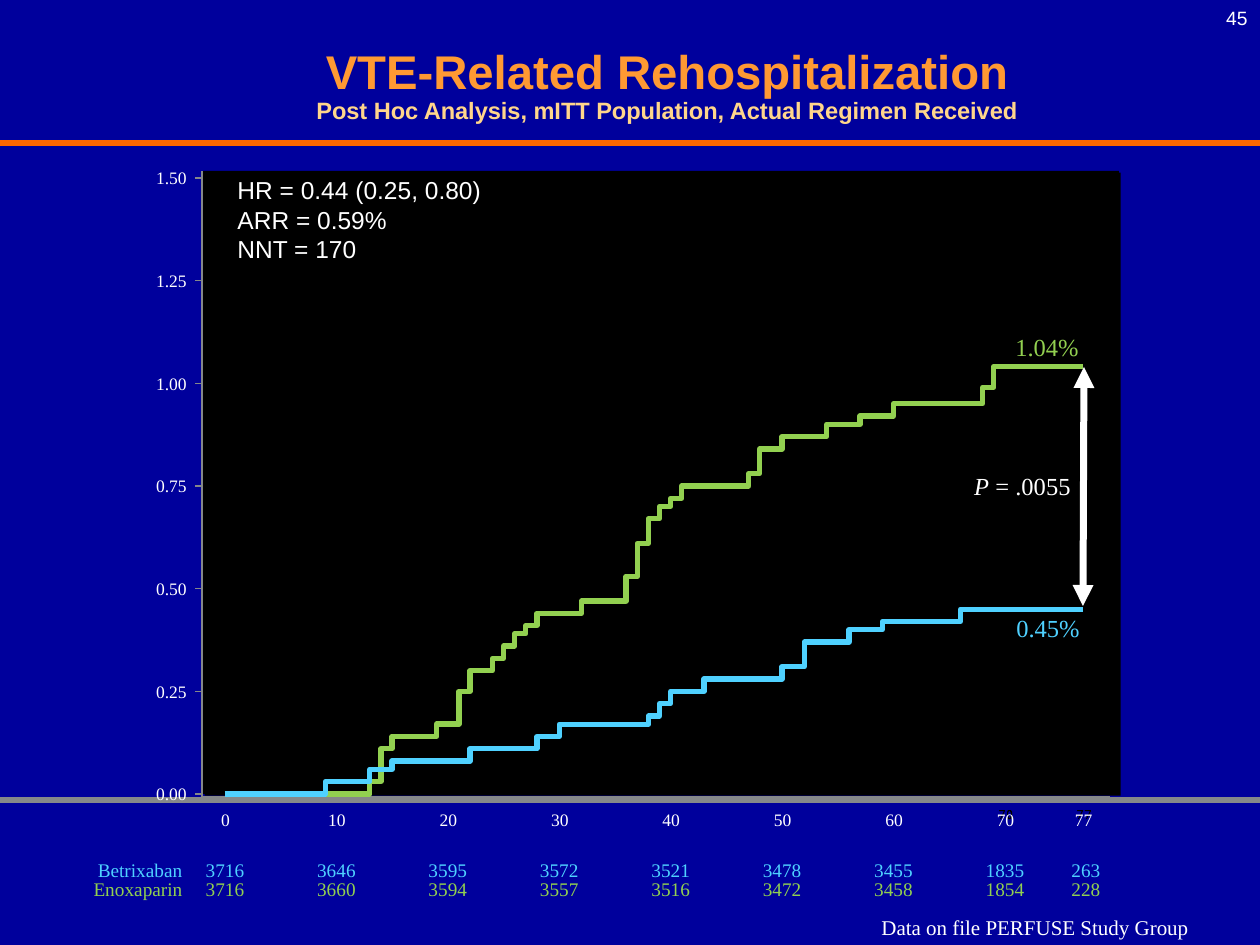
from lxml import etree
from pptx import Presentation
from pptx.dml.color import RGBColor
from pptx.enum.shapes import MSO_CONNECTOR, MSO_SHAPE
from pptx.enum.text import MSO_ANCHOR, PP_ALIGN
from pptx.oxml.ns import qn
from pptx.util import Emu, Pt

LINE = MSO_CONNECTOR.STRAIGHT
RECT = MSO_SHAPE.RECTANGLE
LEFT, MID, RIGHT = PP_ALIGN.LEFT, PP_ALIGN.CENTER, PP_ALIGN.RIGHT
TOP, CENTER = MSO_ANCHOR.TOP, MSO_ANCHOR.MIDDLE

NAVY = RGBColor(0x00, 0x00, 0x9C)
BLACK = RGBColor(0x00, 0x00, 0x00)
WHITE = RGBColor(0xFF, 0xFF, 0xFF)
ORANGE = RGBColor(0xFF, 0x66, 0x00)
AMBER = RGBColor(0xFF, 0x99, 0x33)
CREAM = RGBColor(0xFF, 0xD6, 0x8B)
GRAY = RGBColor(0x85, 0x88, 0x8A)
GREEN = RGBColor(0x92, 0xD0, 0x50)
BLUE = RGBColor(0x4F, 0xD1, 0xFF)
SANS, SERIF = "Arial", "Times New Roman"

TITLE = [
    [("VTE-Related Rehospitalization", {})],
    [("Post Hoc Analysis, mITT Population, Actual Regimen Received",
      {"size": 13.5, "color": CREAM})],
]
STATS = ["HR = 0.44 (0.25, 0.80)", "ARR = 0.59%", "NNT = 170"]
PVALUE = [[("P", {"italic": True}), (" = .0055", {})]]
SOURCE = ["Data on file PERFUSE Study Group"]
DAYS = [0, 10, 20, 30, 40, 50, 60, 70, 77]
RATES = [0, 0.25, 0.5, 0.75, 1, 1.25, 1.5]
ARMS = [
    {"name": "Enoxaparin", "color": GREEN, "top": 871,
     "risk": [3716, 3660, 3594, 3557, 3516, 3472, 3458, 1854, 228],
     "end": "1.04%", "at": (1003, 326),
     "steps": [(13, 0.03), (14, 0.11), (15, 0.14), (19, 0.17), (21, 0.25),
               (22, 0.3), (24, 0.33), (25, 0.36), (26, 0.39), (27, 0.41),
               (28, 0.44), (32, 0.47), (36, 0.53), (37, 0.61), (38, 0.67),
               (39, 0.7), (40, 0.72), (41, 0.75), (47, 0.78), (48, 0.84),
               (50, 0.87), (54, 0.9), (57, 0.92), (60, 0.95), (68, 0.99),
               (69, 1.04)]},
    {"name": "Betrixaban", "color": BLUE, "top": 852,
     "risk": [3716, 3646, 3595, 3572, 3521, 3478, 3455, 1835, 263],
     "end": "0.45%", "at": (1004, 607),
     "steps": [(9, 0.03), (13, 0.06), (15, 0.08), (22, 0.11), (28, 0.14),
               (30, 0.17), (38, 0.19), (39, 0.22), (40, 0.25), (43, 0.28),
               (50, 0.31), (52, 0.37), (56, 0.4), (59, 0.42), (66, 0.45)]},
]
SEVEN = [(6, 0), (0, 0), (0, 1), (5, 1), (1, 9), (2, 9), (6, 1)]
ZERO = [(4, 0), (1, 0), (0, 2), (0, 7), (1, 9), (4, 9), (5, 7), (5, 2)]
HOLE = [(2, 1), (3, 1), (4, 3), (4, 6), (3, 8), (2, 8), (1, 6), (1, 3)]
GLYPHS = [(999, [SEVEN]), (1007, [ZERO, HOLE]), (1077, [SEVEN]), (1085, [SEVEN])]

SCALE = 914400 / 126
START, BASE, LAST = 225, 794, 77
ACROSS, UP = 858 / LAST, 616 / 1.5


def px(num):
    return Emu(round(num * SCALE))


def day_x(day):
    return START + day * ACROSS


def rate_y(rate):
    return BASE - rate * UP


prs = Presentation()
prs.slide_width, prs.slide_height = px(1260), px(945)
slide = prs.slides.add_slide(prs.slide_layouts[6])
slide.background.fill.solid()
slide.background.fill.fore_color.rgb = NAVY
shapes = slide.shapes


def text(paras, box, size=10, color=WHITE, font=SERIF, bold=False, italic=False,
         align=LEFT, anchor=TOP, wrap=False, inset=True, space=None):
    shape = shapes.add_textbox(*map(px, box))
    frame = shape.text_frame
    frame.word_wrap, frame.vertical_anchor = wrap, anchor
    if not inset:
        frame.margin_left = frame.margin_right = 0
        frame.margin_top = frame.margin_bottom = 0
    for pos, runs in enumerate(paras):
        para = frame.add_paragraph() if pos else frame.paragraphs[0]
        para.alignment, para.line_spacing = align, space
        for words, diff in [(runs, {})] if isinstance(runs, str) else runs:
            run = para.add_run()
            run.text = words
            run.font.name, run.font.bold = font, bold
            run.font.italic = diff.get("italic", italic)
            run.font.size = Pt(diff.get("size", size))
            run.font.color.rgb = diff.get("color", color)


def line(x1, y1, x2, y2, color=GRAY, width=0.9, heads=False):
    conn = shapes.add_connector(LINE, px(x1), px(y1), px(x2), px(y2))
    conn.line.color.rgb, conn.line.width = color, Pt(width)
    if heads:
        for end in ("a:headEnd", "a:tailEnd"):
            etree.SubElement(conn.line._get_or_add_ln(), qn(end), type="triangle")
    etree.SubElement(conn._element.spPr, qn("a:effectLst"))


def outline(loops, closed=True):
    first, *rest = [[(px(x), px(y)) for x, y in loop] for loop in loops]
    form = shapes.build_freeform(*first[0])
    form.add_line_segments(first[1:], close=closed)
    for loop in rest:
        form.move_to(*loop[0])
        form.add_line_segments(loop[1:], close=closed)
    shape = form.convert_to_shape()
    shape.shadow.inherit = False
    return shape


def curve(steps, color):
    points, level = [(START, BASE)], BASE
    for day, rate in steps:
        points += [(day_x(day), level), (day_x(day), rate_y(rate))]
        level = rate_y(rate)
    shape = outline([points + [(day_x(LAST), level)]], closed=False)
    shape.fill.background()
    shape.line.color.rgb, shape.line.width = color, Pt(3)


line(0, 143, 1260, 143, ORANGE, 3)
text(["45"], (1203, 0, 57, 39), size=11, font=SANS, align=RIGHT, wrap=True)
text(TITLE, (199, 48, 936, 77), size=27, color=AMBER, font=SANS, bold=True,
     align=MID, anchor=CENTER, wrap=True, inset=False, space=0.9)

plot = shapes.add_shape(RECT, *map(px, (203, 171, 916, 623)))
plot.fill.solid()
plot.fill.fore_color.rgb = BLACK
plot.line.fill.background()
plot.shadow.inherit = False
shade = etree.SubElement(plot._element.spPr.find(qn("a:effectLst")),
                         qn("a:outerShdw"), dist=str(Pt(1.4)), dir="2700000")
etree.SubElement(shade, qn("a:srgbClr"), val=str(BLACK))

line(0, 800, 1260, 800, width=3.45)
line(201, 797, 1110, 797)
for left, loops in GLYPHS:
    glyph = outline([[(left + x, 810 + y) for x, y in loop] for loop in loops])
    glyph.fill.solid()
    glyph.fill.fore_color.rgb = BLACK
    glyph.line.fill.background()

for day in DAYS:
    text([str(day)], (day_x(day) - 21, 803, 43, 34), align=MID)

for arm in ARMS:
    look = {"size": 11, "color": arm["color"]}
    text([arm["name"]], (81, arm["top"], 114, 37), align=RIGHT, **look)
    for day, count in zip(DAYS, arm["risk"]):
        shift = 3 if day == LAST else 0
        text([str(count)], (day_x(day) - 32 + shift, arm["top"], 64, 37),
             align=MID, **look)

line(1084, 367, 1083, 606, WHITE, 4, heads=True)
text(PVALUE, (738, 465, 345, 43), size=14, align=RIGHT, wrap=True)
for arm in ARMS:
    text([arm["end"]], (*arm["at"], 89, 43), size=14, color=arm["color"])
    curve(arm["steps"], arm["color"])

line(202, 797, 202, 171)
for rate in RATES:
    y = rate_y(rate)
    line(201, y, 195, y)
    text([f"{rate:.2f}"], (142, y - 17, 57, 34), align=RIGHT)

text(STATS, (225, 169, 345, 102), size=14, font=SANS, wrap=True)
text(SOURCE, (869, 908, 336, 38), size=12)

prs.save("out.pptx")
